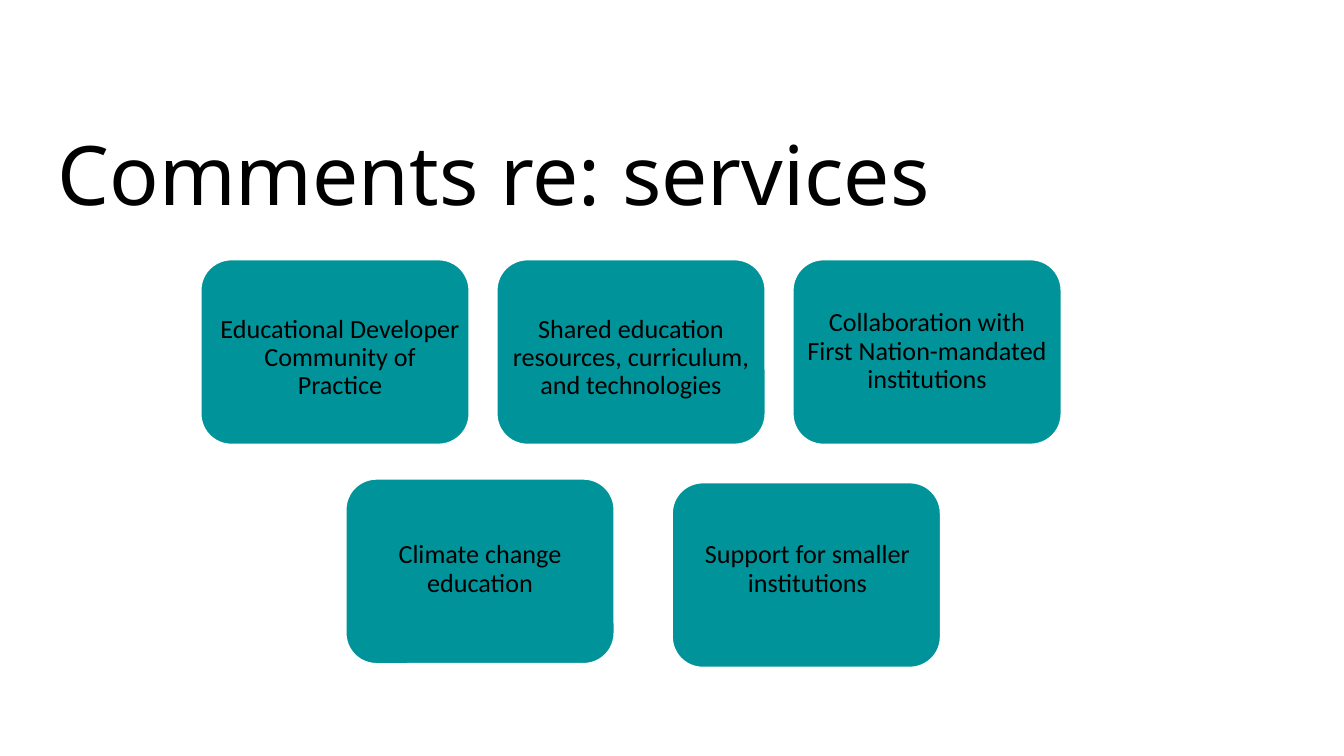
from dataclasses import dataclass

import pptx
import pptx.dml.color
import pptx.enum.shapes
import pptx.enum.text
import pptx.slide
import pptx.util

Pt = pptx.util.Pt
RGBColor = pptx.dml.color.RGBColor


@dataclass(frozen=True)
class Theme:
    card_fill: RGBColor = RGBColor(0x00, 0x94, 0x9A)
    card_line: RGBColor = RGBColor(0xFF, 0xFF, 0xFF)
    ink: RGBColor = RGBColor(0x00, 0x00, 0x00)
    title_font: str = "Noto Sans"
    title_size: float = 44
    label_font: str = "Calibri"
    label_size: float = 14


@dataclass(frozen=True)
class Area:
    left: float
    top: float
    width: float
    height: float


@dataclass(frozen=True)
class Card:
    label: str
    left: float
    top: float
    label_top: float
    label_shift: float = 0


THEME = Theme()
CARD_WIDTH, CARD_HEIGHT = 144, 99.2
LABEL_HEIGHT = 53.3
LABEL_INSET = 7.8
FIRST_LEFT, COLUMN_STEP = 107.5, 158.6
TOP_ROW = 139

CARDS = [
    Card("Educational Developer Community of Practice",
         FIRST_LEFT, TOP_ROW, 161.3, 2.7),
    Card("Shared education resources, curriculum, and technologies",
         FIRST_LEFT + COLUMN_STEP, TOP_ROW, 161.3),
    Card("Collaboration with First Nation-mandated institutions",
         FIRST_LEFT + 2 * COLUMN_STEP, TOP_ROW, 157.9),
    Card("Climate change education", 185.2, 256.5, 282.2),
    Card("Support for smaller institutions", 360, 258.5, 282.2, 0.6),
]


def add_text(page: pptx.slide.Slide, area: Area, text: str, font: str, size: float,
             anchor: pptx.enum.text.MSO_ANCHOR,
             side: float, top: float, bottom: float) -> None:
    box = page.shapes.add_textbox(
        Pt(area.left), Pt(area.top), Pt(area.width), Pt(area.height))
    frame = box.text_frame
    frame.word_wrap = True
    frame.vertical_anchor = anchor
    frame.margin_left = frame.margin_right = Pt(side)
    frame.margin_top, frame.margin_bottom = Pt(top), Pt(bottom)
    para = frame.paragraphs[0]
    para.text = text
    para.alignment = pptx.enum.text.PP_ALIGN.CENTER
    para.line_spacing = 0.9
    para.font.name = font
    para.font.size = Pt(size)
    para.font.color.rgb = THEME.ink


def add_card(page: pptx.slide.Slide, card: Card) -> None:
    shape = page.shapes.add_shape(
        pptx.enum.shapes.MSO_SHAPE.ROUNDED_RECTANGLE,
        Pt(card.left), Pt(card.top), Pt(CARD_WIDTH), Pt(CARD_HEIGHT))
    shape.shadow.inherit = False
    shape.fill.solid()
    shape.fill.fore_color.rgb = THEME.card_fill
    shape.line.color.rgb = THEME.card_line
    shape.line.width = Pt(1)
    area = Area(card.left + card.label_shift, card.label_top, CARD_WIDTH, LABEL_HEIGHT)
    add_text(page, area, card.label, THEME.label_font, THEME.label_size,
             pptx.enum.text.MSO_ANCHOR.TOP, LABEL_INSET, LABEL_INSET, 0)


def main() -> None:
    deck = pptx.Presentation()
    deck.slide_width, deck.slide_height = Pt(720), Pt(405)
    page = deck.slides.add_slide(deck.slide_layouts[6])
    add_text(page, Area(14.4, 19.4, 500.4, 103.7), "Comments re: services",
             THEME.title_font, THEME.title_size,
             pptx.enum.text.MSO_ANCHOR.BOTTOM, 7.2, 3.6, 3.6)
    for card in CARDS:
        add_card(page, card)
    deck.save("out.pptx")


if __name__ == "__main__":
    main()
